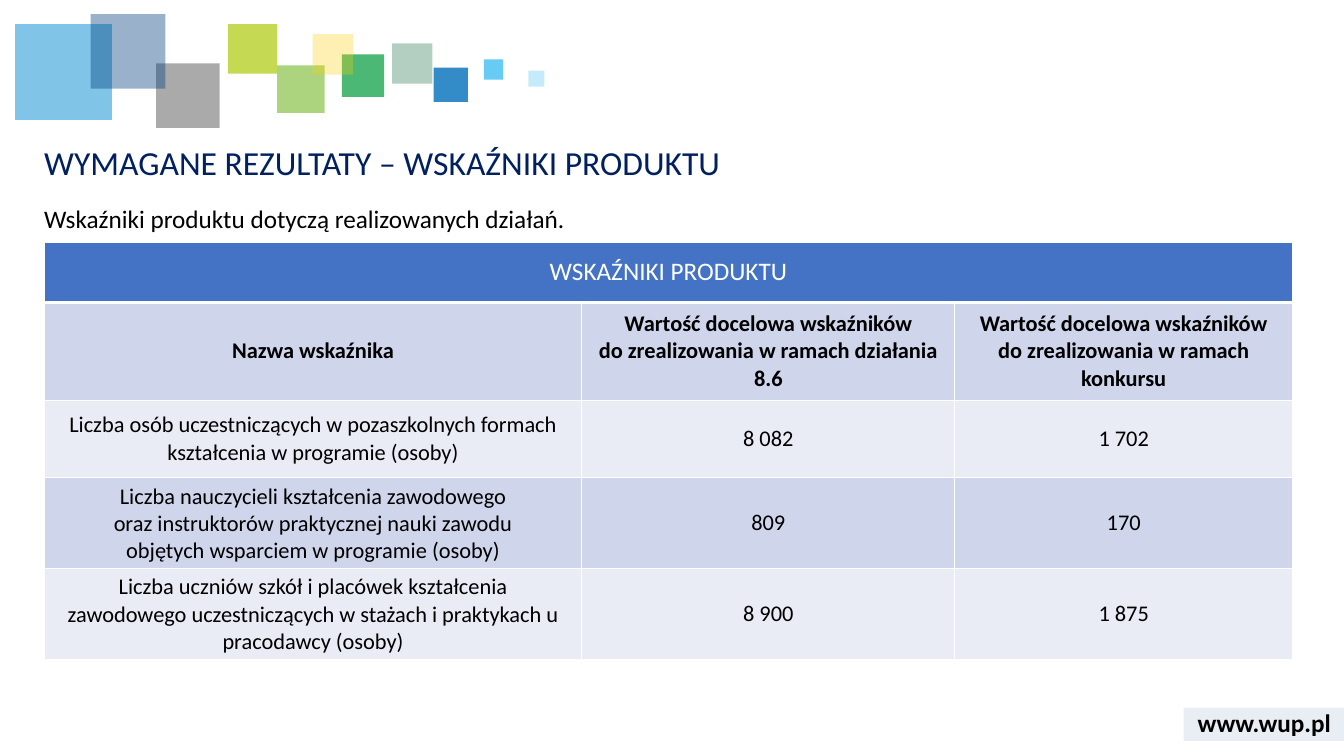
from copy import deepcopy

from lxml.etree import SubElement
from pptx import Presentation
from pptx.dml.color import RGBColor
from pptx.enum.shapes import MSO_SHAPE
from pptx.enum.text import MSO_ANCHOR, PP_ALIGN
from pptx.oxml.ns import qn
from pptx.util import Inches, Pt

FONT = "Calibri"
SQUARES = [
    (3.89, 0.43, 0.40, 0.40, "006138", 30),
    (4.30, 0.67, 0.34, 0.34, "006EB9", 80),
    (3.39, 0.54, 0.42, 0.42, "009A3C", 70),
    (0.15, 0.24, 0.96, 0.95, "028BD3", 50),
    (2.75, 0.65, 0.47, 0.47, "75B82A", 60),
    (1.55, 0.63, 0.63, 0.64, "575757", 50),
    (0.90, 0.14, 0.74, 0.74, "003D7C", 40),
    (4.80, 0.59, 0.19, 0.20, "40C0F1", 80),
    (2.26, 0.24, 0.49, 0.49, "AFCA0B", 70),
    (3.10, 0.34, 0.40, 0.40, "FED000", 30),
    (5.24, 0.70, 0.16, 0.16, "40C0F1", 30),
]
COLUMN_WIDTHS = [5.33, 3.7, 3.35]
ROW_HEIGHTS = [0.6, 0.97, 0.77, 0.9, 0.9]
INDICATORS = [
    ["WSKAŹNIKI PRODUKTU", "", ""],
    [
        "Nazwa wskaźnika",
        "Wartość docelowa wskaźników\vdo zrealizowania w ramach działania 8.6",
        "Wartość docelowa wskaźników\vdo zrealizowania w ramach konkursu",
    ],
    [
        "Liczba osób uczestniczących w pozaszkolnych formach kształcenia w programie (osoby)",
        "8 082",
        "1 702",
    ],
    [
        "Liczba nauczycieli kształcenia zawodowego\n"
        "oraz instruktorów praktycznej nauki zawodu\n"
        "objętych wsparciem w programie (osoby)",
        "809",
        "170",
    ],
    [
        "Liczba uczniów szkół i placówek kształcenia\n"
        "zawodowego uczestniczących w stażach i praktykach u pracodawcy (osoby)",
        "8 900",
        "1 875",
    ],
]


def color(value):
    return RGBColor.from_string(value)


def write(frame, text, size, ink, bold=False, align=PP_ALIGN.LEFT, spacing=None):
    frame.word_wrap = True
    frame.text = text
    for paragraph in frame.paragraphs:
        paragraph.alignment = align
        if spacing:
            paragraph.line_spacing = spacing
        for run in paragraph.runs:
            run.font.name = FONT
            run.font.size = Pt(size)
            run.font.bold = bold
            run.font.color.rgb = color(ink)
        for line_break in paragraph._p.findall(qn("a:br")):
            line_break.append(deepcopy(paragraph.runs[0]._r.rPr))


def add_text(slide, left, top, width, height, text, size, ink, anchor, **style):
    frame = slide.shapes.add_textbox(
        Inches(left), Inches(top), Inches(width), Inches(height)
    ).text_frame
    write(frame, text, size, ink, **style)
    frame.vertical_anchor = anchor


def add_tint(slide, left, top, width, height, fill, opacity):
    tint = slide.shapes.add_shape(
        MSO_SHAPE.RECTANGLE, Inches(left), Inches(top), Inches(width), Inches(height)
    )
    tint.shadow.inherit = False
    tint.line.fill.background()
    tint.fill.solid()
    tint.fill.fore_color.rgb = color(fill)
    srgb = tint._element.spPr.find(qn("a:solidFill")).find(qn("a:srgbClr"))
    SubElement(srgb, qn("a:alpha"), val=str(opacity * 1000))


def add_squares(slide, left, top):
    for x, y, width, height, fill, opacity in SQUARES:
        add_tint(slide, left + x, top + y, width, height, fill, opacity)


def add_address(slide, left, top, width, height):
    add_tint(slide, left, top + 0.05, width, height - 0.07, "2F5597", 10)
    add_text(slide, left, top, width, height, "www.wup.pl", 18, "000000",
             MSO_ANCHOR.MIDDLE, bold=True, align=PP_ALIGN.CENTER)


def add_heading(slide, left, top, width):
    add_text(slide, left, top, width, 0.55, "WYMAGANE REZULTATY – WSKAŹNIKI PRODUKTU",
             24, "002060", MSO_ANCHOR.MIDDLE, spacing=0.9)
    add_text(slide, left, top + 0.64, width, 0.4,
             "Wskaźniki produktu dotyczą realizowanych działań.",
             18, "000000", MSO_ANCHOR.TOP, spacing=0.9)


def set_borders(cell, bottom):
    properties = cell._tc.get_or_add_tcPr()
    for side, points in (("L", 1), ("R", 1), ("T", 1), ("B", bottom)):
        border = SubElement(properties, qn(f"a:ln{side}"), w=str(Pt(points)))
        SubElement(SubElement(border, qn("a:solidFill")), qn("a:srgbClr"), val="FFFFFF")


def add_indicators(slide, left, top):
    table = slide.shapes.add_table(
        len(ROW_HEIGHTS), len(COLUMN_WIDTHS), Inches(left), Inches(top),
        Inches(sum(COLUMN_WIDTHS)), Inches(sum(ROW_HEIGHTS))
    ).table
    table.horz_banding = False
    for column, width in zip(table.columns, COLUMN_WIDTHS):
        column.width = Inches(width)
    for row, height in zip(table.rows, ROW_HEIGHTS):
        row.height = Inches(height)
    table.cell(0, 0).merge(table.cell(0, 2))
    for r, texts in enumerate(INDICATORS):
        banner = r == 0
        fill = "4472C4" if banner else ("E9EBF5", "CFD5EA")[r % 2]
        for c, text in enumerate(texts):
            cell = table.cell(r, c)
            set_borders(cell, 3 if banner else 1)
            cell.fill.solid()
            cell.fill.fore_color.rgb = color(fill)
            cell.vertical_anchor = MSO_ANCHOR.MIDDLE
            if text:
                write(cell.text_frame, text, 18 if banner else 16,
                      "FFFFFF" if banner else "000000",
                      bold=r == 1, align=PP_ALIGN.CENTER)


def main():
    presentation = Presentation()
    presentation.slide_width = Inches(13.33)
    presentation.slide_height = Inches(7.5)
    slide = presentation.slides.add_slide(presentation.slide_layouts[6])
    add_squares(slide, 0, 0)
    add_address(slide, 11.74, 6.97, 1.6, 0.4)
    add_heading(slide, 0.34, 1.36, 12.41)
    add_indicators(slide, 0.44, 2.4)
    presentation.save("out.pptx")


if __name__ == "__main__":
    main()
